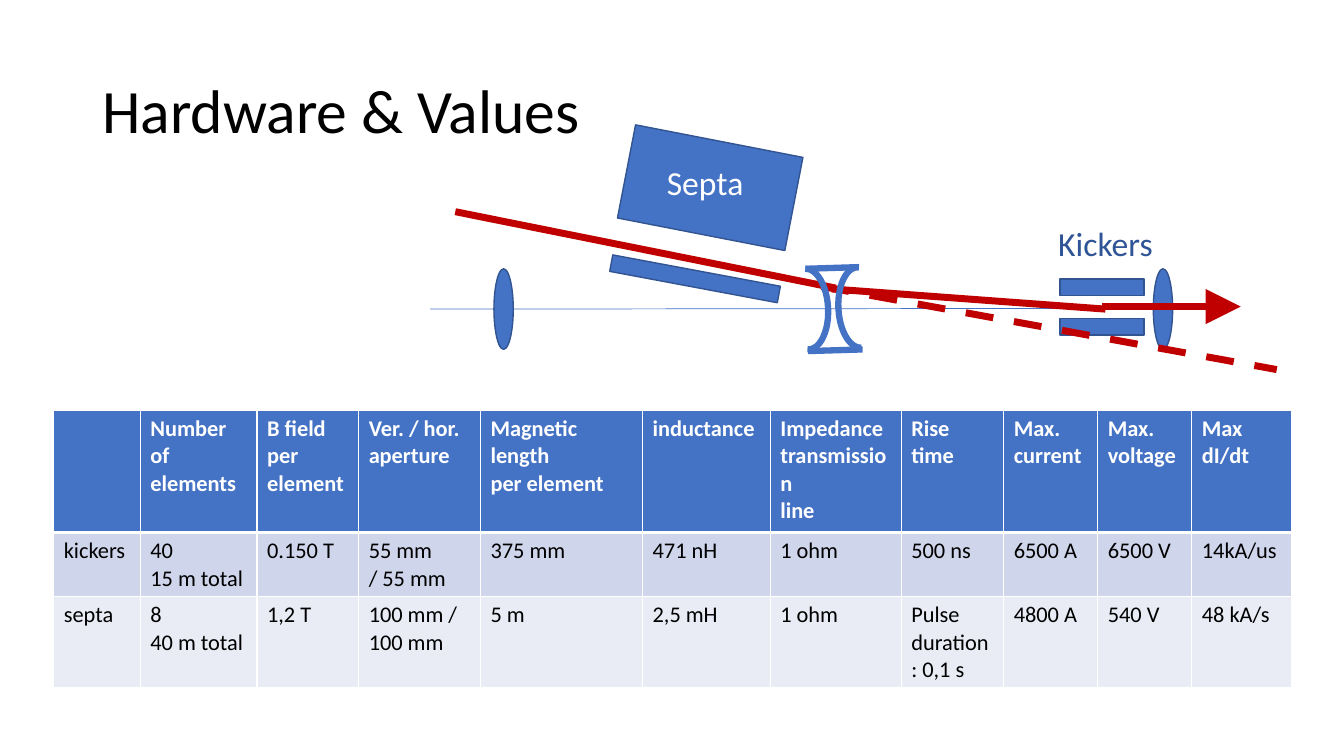
from dataclasses import dataclass

import pptx
import pptx.dml.color
import pptx.enum.dml
import pptx.enum.shapes
import pptx.enum.text
import pptx.oxml
import pptx.oxml.ns
import pptx.util

SHAPE = pptx.enum.shapes.MSO_SHAPE
FONT = "Calibri"
BLUE, EDGE, LABEL, RED = "4472C4", "325491", "2F5597", "C00000"
BLACK, WHITE = "000000", "FFFFFF"
ROW_FILLS = [BLUE, "CFD5EA", "E9EBF5"]

# The page is a grid of 16 columns by 9 rows
WIDTH, HEIGHT = pptx.util.Inches(13.333), pptx.util.Inches(7.5)


def across(columns: float) -> int:
    return round(columns * WIDTH / 16)


def down(rows: float) -> int:
    return round(rows * HEIGHT / 9)


def colour(code: str) -> pptx.dml.color.RGBColor:
    return pptx.dml.color.RGBColor.from_string(code)


@dataclass
class Block:
    left: float
    top: float
    width: float
    height: float
    kind: SHAPE = SHAPE.RECTANGLE
    turn: float = 0


@dataclass
class Arc:
    left: float
    top: float
    turn: float


@dataclass
class Line:
    x1: float
    y1: float
    x2: float
    y2: float
    code: str = RED
    weight: float = 5
    dashed: bool = False
    arrow: bool = False


@dataclass
class Label:
    text: str
    left: float
    top: float
    width: float
    height: float
    size: float
    code: str
    spacing: float = 1


def write(para, text: str, size: float, code: str, bold: bool = False) -> None:
    span = para.add_run()
    span.text = text
    span.font.name, span.font.size, span.font.bold = FONT, pptx.util.Pt(size), bold
    span.font.color.rgb = colour(code)


def draw_block(page, item: Block) -> None:
    box = page.shapes.add_shape(item.kind, across(item.left), down(item.top),
                                across(item.width), down(item.height))
    box.rotation = item.turn
    box.shadow.inherit = False
    box.fill.solid()
    box.fill.fore_color.rgb = colour(BLUE)
    box.line.color.rgb = colour(EDGE)
    box.line.width = pptx.util.Pt(1)


def draw_arc(page, item: Arc) -> None:
    arc = page.shapes.add_shape(SHAPE.ARC, across(item.left), down(item.top),
                                across(0.5), down(0.96))
    arc.adjustments[0], arc.adjustments[1] = 162, 55.32
    arc.rotation = item.turn
    arc.shadow.inherit = False
    arc.fill.background()
    arc.line.color.rgb = colour(BLUE)
    arc.line.width = pptx.util.Pt(4.5)


def draw_line(page, item: Line) -> None:
    line = page.shapes.add_connector(
        pptx.enum.shapes.MSO_CONNECTOR.STRAIGHT,
        across(item.x1), down(item.y1), across(item.x2), down(item.y2))
    line.line.color.rgb = colour(item.code)
    line.line.width = pptx.util.Pt(item.weight)
    if item.dashed:
        line.line.dash_style = pptx.enum.dml.MSO_LINE.DASH
    if item.arrow:
        line.line._get_or_add_ln().append(pptx.oxml.parse_xml(
            f'<a:tailEnd {pptx.oxml.ns.nsdecls("a")} type="triangle" w="lg" len="lg"/>'))
    line._element.spPr.append(
        pptx.oxml.parse_xml(f'<a:effectLst {pptx.oxml.ns.nsdecls("a")}/>'))


def draw_label(page, item: Label) -> None:
    box = page.shapes.add_textbox(across(item.left), down(item.top),
                                  across(item.width), down(item.height))
    frame = box.text_frame
    frame.word_wrap = True
    frame.vertical_anchor = pptx.enum.text.MSO_ANCHOR.MIDDLE
    para = frame.paragraphs[0]
    para.line_spacing = item.spacing
    write(para, item.text, item.size, item.code)


def add_border(cell, side: str, weight: float) -> None:
    cell._tc.get_or_add_tcPr().append(pptx.oxml.parse_xml(
        f'<a:ln{side} {pptx.oxml.ns.nsdecls("a")} w="{pptx.util.Pt(weight)}">'
        f'<a:solidFill><a:srgbClr val="{WHITE}"/></a:solidFill></a:ln{side}>'))


def draw_table(page, columns: list[float], rows: list[float],
               values: list[list[str]]) -> None:
    table = page.shapes.add_table(len(rows), len(columns), across(0.64), down(4.88),
                                  across(sum(columns)), down(sum(rows))).table
    for column, width in zip(table.columns, columns):
        column.width = across(width)
    for r, (height, texts) in enumerate(zip(rows, values)):
        table.rows[r].height = down(height)
        header = r == 0
        for c, text in enumerate(texts):
            cell = table.cell(r, c)
            weights = {"L": 1, "R": 1, "T": 3 if r == 1 else 1, "B": 3 if header else 1}
            for side, weight in weights.items():
                add_border(cell, side, weight)
            cell.fill.solid()
            cell.fill.fore_color.rgb = colour(ROW_FILLS[r])
            for n, part in enumerate(text.split("\n") if text else []):
                frame = cell.text_frame
                para = frame.add_paragraph() if n else frame.paragraphs[0]
                write(para, part, 16, WHITE if header else BLACK, header)


# Beam line, from back to front
BEAM_LINE = [
    Line(5.12, 3.68, 14.47, 3.67, BLUE, 0.5),
    *[Block(left, 3.2, 0.23, 0.96, SHAPE.OVAL) for left in (5.88, 13.73)],
    *[Block(12.62, top, 1, 0.2) for top in (3.79, 3.32)],
    Line(13.12, 3.65, 14.77, 3.65, arrow=True),
    Line(9.9, 3.44, 13.16, 3.68),
    Line(5.42, 2.52, 9.95, 3.43),
    Block(7.26, 3.22, 2.03, 0.2, turn=10.6),
    Block(7.44, 1.67, 2.03, 1.13, turn=11),
    Line(9.78, 3.41, 15.2, 4.4, dashed=True),
    Arc(9.36, 3.2, 357.3),
    Arc(9.98, 3.18, 177.3),
    Line(9.59, 3.2, 10.22, 3.18, BLUE, 4.5),
    Line(9.62, 4.18, 10.27, 4.16, BLUE, 4.5),
    Label("Septa", 7.82, 1.87, 1.28, 0.6, 24, WHITE),
    Label("Kickers", 12.48, 2.59, 1.48, 0.6, 24, LABEL),
]
DRAW = {Block: draw_block, Arc: draw_arc, Line: draw_line, Label: draw_label}

# Hardware table
COLUMNS = [1.03, 1.39, 1.21, 1.45, 1.93, 1.52, 1.56, 1.22, 1.12, 1.12, 1.19]
ROWS = [1.46, 0.6, 0.6]
VALUES = [
    ["", "Number of\nelements", "B field\nper\nelement", "Ver. / hor.\naperture",
     "Magnetic length\nper element", "inductance", "Impedance\ntransmission\nline",
     "Rise\ntime", "Max.\ncurrent", "Max.\nvoltage", "Max\ndI/dt"],
    ["kickers", "40\n15 m total", "0.150 T", "55 mm\n/ 55 mm", "375 mm", "471 nH",
     "1 ohm", "500 ns", "6500 A", "6500 V", "14kA/us"],
    ["septa", "8\n40 m total", "1,2 T", "100 mm / 100 mm", "5 m", "2,5 mH",
     "1 ohm", "Pulse duration : 0,1 s", "4800 A", "540 V", "48 kA/s"],
]


def main() -> None:
    deck = pptx.Presentation()
    deck.slide_width, deck.slide_height = WIDTH, HEIGHT
    page = deck.slides.add_slide(deck.slide_layouts[6])
    draw_label(page, Label("Hardware & Values", 1.1, 0.48, 13.8, 1.74, 44, BLACK, 0.9))
    draw_table(page, COLUMNS, ROWS, VALUES)
    for item in BEAM_LINE:
        DRAW[type(item)](page, item)
    deck.save("out.pptx")


if __name__ == "__main__":
    main()
